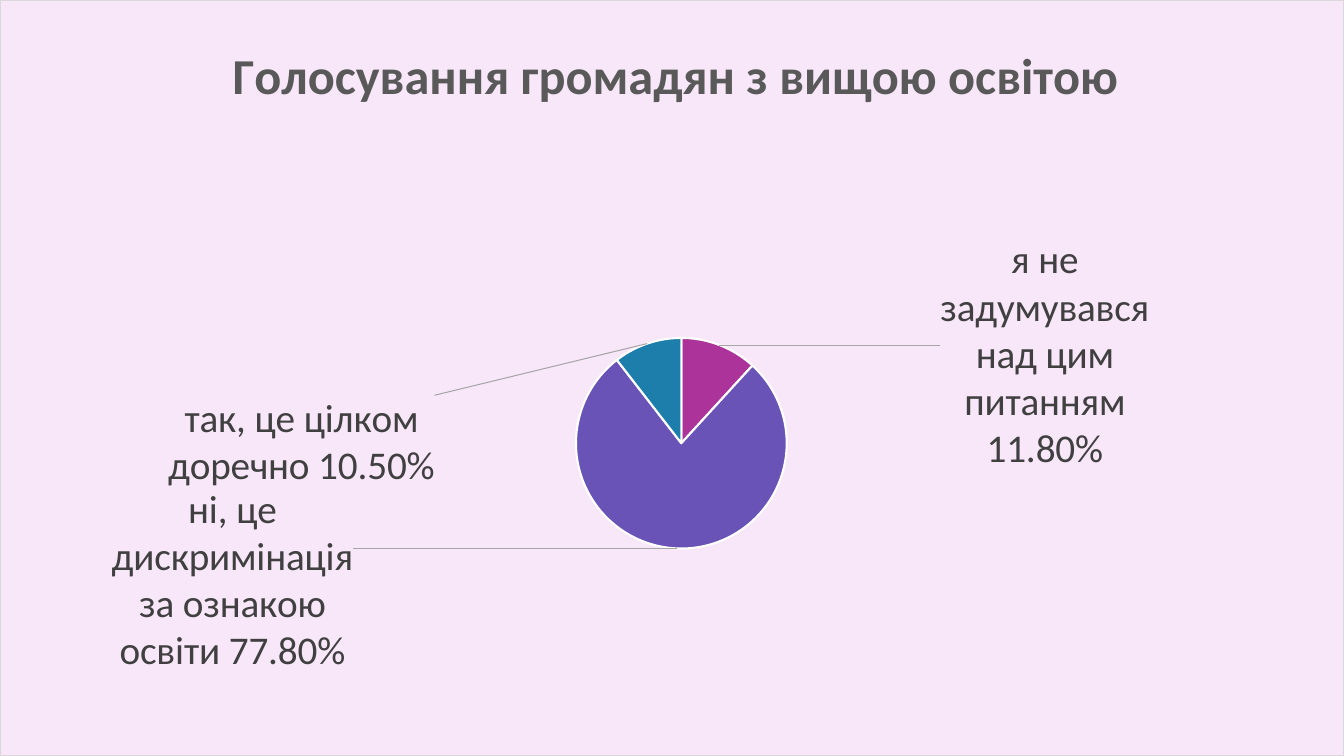
"""Builds a pie chart slide on how citizens with higher education voted."""
from dataclasses import dataclass

from lxml import etree
from pptx import Presentation
from pptx.chart.data import CategoryChartData
from pptx.chart.series import PieSeries
from pptx.dml.color import RGBColor
from pptx.enum.chart import XL_CHART_TYPE, XL_LABEL_POSITION
from pptx.oxml import parse_xml
from pptx.oxml.ns import nsdecls
from pptx.text.text import Font
from pptx.util import Cm, Pt

PIE = XL_CHART_TYPE.PIE
FIT = XL_LABEL_POSITION.BEST_FIT
WIDE, HIGH = Cm(33.87), Cm(19.05)
HEAD = {"name": "Calibri", "size": Pt(36), "bold": True}
BODY = {"name": "Calibri", "size": Pt(10), "bold": False}
NOTE = {"name": "Calibri", "size": Pt(28), "bold": False}
SHOW = {"show_value": True, "show_category_name": True, "show_percentage": False,
        "number_format": "0.00%", "number_format_is_linked": False}


@dataclass
class Slice:
    name: str
    share: float | None
    color: str
    shift: tuple[float, float] | None = None


SLICES = [
    Slice("голосування громадян з вищою освітою", None, "E34B7A"),
    Slice("я не задумувався над цим питанням", 0.118, "AC339A", (16.3, 17.7)),
    Slice("ні, це дискримінація за ознакою освіти", 0.778, "6953B7", (-33.1, -9)),
    Slice("так, це цілком доречно", 0.105, "1D7EAB", (-15.7, 20.1)),
]


def paint(code: str) -> RGBColor:
    return RGBColor.from_string(code)


def style(font: Font, form: dict, code: str) -> None:
    for key, value in form.items():
        setattr(font, key, value)
    font.color.rgb = paint(code)


def place(spots: dict[str, float], modes: str = "") -> etree._Element:
    parts = "".join(f'<c:{key} val="{value / 100:.3f}"/>' for key, value in spots.items())
    return parse_xml(f'<c:layout {nsdecls("c")}><c:manualLayout>{modes}{parts}'
                     '</c:manualLayout></c:layout>')


def outline(code: str, width: float, fill: str = "") -> str:
    inside = f'<a:solidFill><a:srgbClr val="{fill}"/></a:solidFill>' if fill else ""
    return (f'<c:spPr {nsdecls("c", "a")}>{inside}<a:ln w="{Pt(width)}"><a:solidFill>'
            f'<a:srgbClr val="{code}"/></a:solidFill></a:ln></c:spPr>')


def draw(series: PieSeries, index: int, item: Slice) -> None:
    point = series.points[index]
    point.format.fill.solid()
    point.format.fill.fore_color.rgb = paint(item.color)
    point.format.line.color.rgb = paint("FFFFFF")
    point.format.line.width = Pt(1.5)
    if item.shift is None:
        return
    label = point.data_label
    run = label.text_frame.paragraphs[0].add_run()
    run.text = f"{item.name} {item.share:.2%}"
    style(run.font, NOTE, "404040")
    label.position = FIT
    node = series.data_labels._element.xpath(f"c:dLbl[c:idx/@val='{index}']")[0]
    for old in node.xpath("c:layout"):
        node.remove(old)
    node.insert(1, place(dict(zip("xy", item.shift))))


def main() -> None:
    deck = Presentation()
    deck.slide_width, deck.slide_height = WIDE, HIGH
    slide = deck.slides.add_slide(deck.slide_layouts[6])
    back = slide.background.fill
    back.gradient()
    back.gradient_angle = 270
    for stop, code in zip(back.gradient_stops, ("E9C8EF", "89AEDB")):
        stop.color.rgb = paint(code)

    data = CategoryChartData(number_format="0.00%")
    data.categories = [item.name for item in SLICES]
    data.add_series("Series 1", [item.share for item in SLICES])
    chart = slide.shapes.add_chart(PIE, 0, 0, WIDE, HIGH, data).chart
    chart.has_legend = False
    style(chart.font, BODY, "000000")

    chart.has_title = True
    title = chart.chart_title.text_frame
    run = title.paragraphs[0].add_run()
    run.text = "Голосування громадян з вищою освітою"
    style(run.font, HEAD, "595959")

    series = chart.plots[0].series[0]
    labels = series.data_labels
    style(labels.font, NOTE, "404040")
    for key, value in SHOW.items():
        setattr(labels, key, value)
    for index, item in enumerate(SLICES):
        draw(series, index, item)
    lead = parse_xml(f'<c:leaderLines {nsdecls("c")}>{outline("A6A6A6", 0.75)}</c:leaderLines>')
    labels._element.append(lead)

    root = chart._chartSpace
    body = root.xpath("c:chart")[0]
    edge = '<c:xMode val="edge"/><c:yMode val="edge"/>'
    for old in root.xpath("c:chart/c:title/c:layout | c:chart/c:plotArea/c:layout"):
        old.getparent().remove(old)
    root.xpath("c:chart/c:title/c:tx")[0].addnext(place({"x": 16.6, "y": 4}, edge))
    spots = {"x": 42.8, "y": 44.7, "w": 15.8, "h": 27.9}
    inner = '<c:layoutTarget val="inner"/>' + edge
    root.xpath("c:chart/c:plotArea")[0].insert(0, place(spots, inner))
    body.addnext(parse_xml(outline("D9D9D9", 0.75, "F8E7F9")))
    if not root.xpath("c:roundedCorners"):
        body.addprevious(parse_xml(f'<c:roundedCorners {nsdecls("c")} val="0"/>'))
    deck.save("out.pptx")


if __name__ == "__main__":
    main()
